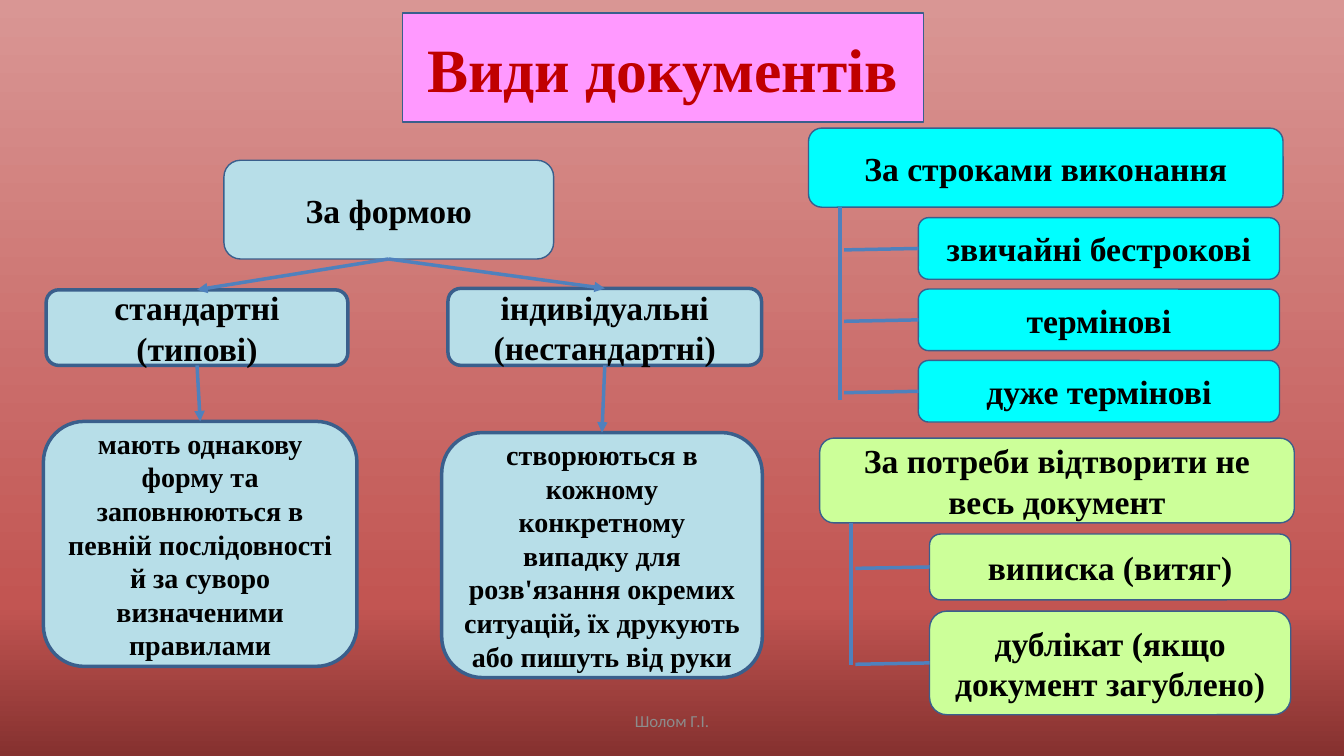
from copy import deepcopy

from pptx import Presentation
from pptx.dml.color import RGBColor
from pptx.enum.shapes import MSO_CONNECTOR as Link, MSO_SHAPE as Kind
from pptx.enum.text import MSO_ANCHOR as Anchor, MSO_AUTO_SIZE as Auto, PP_ALIGN as Align
from pptx.oxml import parse_xml
from pptx.oxml.ns import nsdecls, qn
from pptx.util import Pt

BLACK = RGBColor(0x00, 0x00, 0x00)
RED = RGBColor(0xC0, 0x00, 0x00)
GRAY = RGBColor(0x8C, 0x8C, 0x8C)
PINK = RGBColor(0xFF, 0x99, 0xFF)
ICE = RGBColor(0xB7, 0xDE, 0xE8)
CYAN = RGBColor(0x00, 0xFF, 0xFF)
LIME = RGBColor(0xCC, 0xFF, 0x99)
EDGE = RGBColor(0x3A, 0x5F, 0x8C)
BLUE = RGBColor(0x4F, 0x81, 0xBD)
SHADES = [
    (0, RGBColor(0x85, 0x31, 0x2F)),
    (0.2, RGBColor(0xC2, 0x55, 0x52)),
    (1, RGBColor(0xD9, 0x96, 0x94)),
]


def node(name, attrs=""):
    """Make an empty element of the drawing namespace."""
    return parse_xml(f'<a:{name} {nsdecls("a")} {attrs}/>')


class Chart:
    """Style and drawing methods for the current slide."""

    serif = "Times New Roman"
    sans = "Calibri"
    thin, thick = 1, 2.5

    def __init__(self, slide):
        self.slide = slide
        self.shapes = slide.shapes

    def shade(self):
        """Fill the background with a gradient that runs upwards."""
        fill = self.slide.background.fill
        fill.gradient()
        fill.gradient_angle = 90
        stops = next(self.slide.element.iter(qn("a:gsLst")))
        stops.append(deepcopy(stops[-1]))
        for stop, (place, color) in zip(fill.gradient_stops, SHADES):
            stop.position = place
            stop.color.rgb = color

    def label(self, shape, text, size, color=BLACK, font=serif, bold=True):
        frame = shape.text_frame
        frame.word_wrap = True
        frame.auto_size = Auto.NONE
        frame.vertical_anchor = Anchor.MIDDLE
        para = frame.paragraphs[0]
        para.alignment = Align.CENTER
        run = para.add_run()
        run.text = text
        run.font.name, run.font.size = font, Pt(size)
        run.font.bold = bold
        run.font.color.rgb = color

    def paint(self, shape, fill, width):
        shape.fill.solid()
        shape.fill.fore_color.rgb = fill
        shape.line.color.rgb = EDGE
        shape.line.width = Pt(width)

    def title(self, text, x, y, w, h):
        shape = self.shapes.title
        shape.left, shape.top, shape.width, shape.height = map(Pt, (x, y, w, h))
        shape.element.spPr.append(node("prstGeom", 'prst="snip2SameRect"'))
        self.paint(shape, PINK, self.thin)
        self.label(shape, text, 44, RED)

    def foot(self, text, x, y, w, h):
        shape = self.shapes.add_textbox(*map(Pt, (x, y, w, h)))
        self.label(shape, text, 12, GRAY, self.sans, False)

    def box(self, text, x, y, w, h, fill, width=thin, size=24):
        shape = self.shapes.add_shape(Kind.ROUNDED_RECTANGLE, *map(Pt, (x, y, w, h)))
        shape.shadow.inherit = False
        self.paint(shape, fill, width)
        self.label(shape, text, size)

    def line(self, x1, y1, x2, y2, arrow=False):
        link = self.shapes.add_connector(Link.STRAIGHT, *map(Pt, (x1, y1, x2, y2)))
        link.line.color.rgb = BLUE
        link.line.width = Pt(self.thick)
        props = link.element.spPr
        if arrow:
            props.find(qn("a:ln")).append(node("tailEnd", 'type="triangle"'))
        props.append(node("effectLst"))

    def tree(self, head, x, y, h, fill, items, end):
        """Draw a heading with a trunk down to end and a branch to each item."""
        self.box(head, x, y, 339, h, fill)
        self.line(x + 22.5, y + h, x + 22.5, end)
        for text, top, tall in items:
            self.box(text, x + 78.5, top, 258, tall, fill)
            mid = top + tall / 2
            self.line(x + 25.5, mid + 1, x + 78.5, mid)


def main():
    deck = Presentation()
    deck.slide_width, deck.slide_height = Pt(960), Pt(540)
    chart = Chart(deck.slides.add_slide(deck.slide_layouts[5]))
    chart.shade()
    chart.foot("Шолом Г.І.", 318, 500.5, 324, 28.75)
    chart.title("Види документів", 287.5, 9.25, 372, 78)

    chart.box("За формою", 160, 114.5, 235.5, 70.5, ICE)
    forms = [
        ("стандартні (типові)", (33, 207, 215.5, 54),
         "мають однакову форму та заповнюються в певній послідовності "
         "й за суворо визначеними правилами", (31, 301, 224, 175)),
        ("індивідуальні (нестандартні)", (320, 206, 224, 55),
         "створюються в кожному конкретному випадку для розв'язання окремих "
         "ситуацій, їх друкують або пишуть від руки", (315.5, 309, 229, 175)),
    ]
    for name, spot, note, place in forms:
        chart.box(name, *spot, ICE, chart.thick)
        chart.box(note, *place, ICE, chart.thick, 20)
        x, y, w, h = spot
        mid = x + w / 2
        chart.line(277.5, 185, mid, y, True)
        chart.line(mid, y + h, place[0] + place[2] / 2, place[1], True)

    terms = ["звичайні бестрокові", "термінові", "дуже термінові"]
    chart.tree("За строками виконання", 577.5, 91.5, 56.5, CYAN,
               [(term, 155.5 + 51 * i, 44) for i, term in enumerate(terms)], 286)
    chart.tree("За потреби відтворити не весь документ", 585.5, 313, 60.5, LIME,
               [("виписка (витяг)", 381.5, 47),
                ("дублікат (якщо документ загублено)", 436.5, 74)], 475)
    deck.save("out.pptx")


if __name__ == "__main__":
    main()
